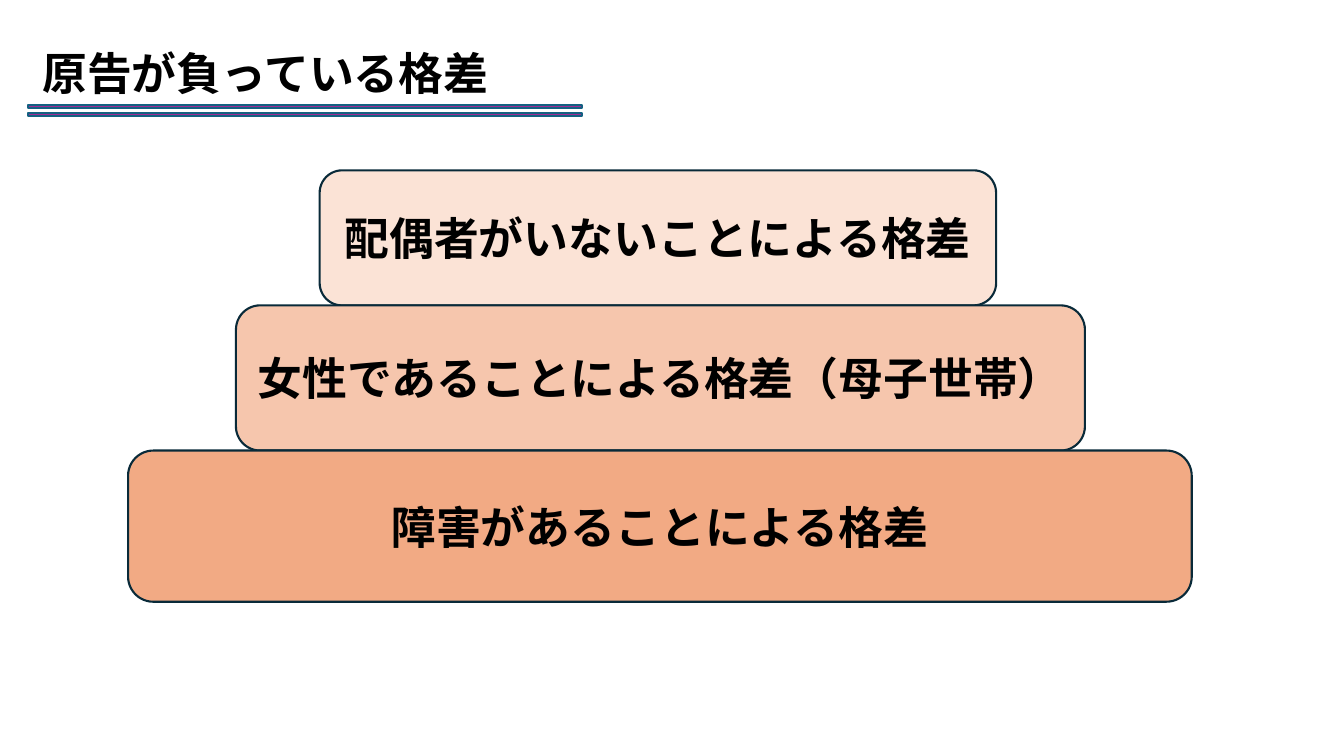
import pptx
import pptx.dml.color
import pptx.enum.shapes
import pptx.enum.text
import pptx.util

Inches = pptx.util.Inches
Shapes = pptx.enum.shapes.MSO_SHAPE
Align = pptx.enum.text.PP_ALIGN

TIERS = [
    # text, left, width, height, fill
    ("配偶者がいないことによる格差", 3.17, 6.71, 1.34, "FBE3D6"),
    ("女性であることによる格差（母子世帯）", 2.34, 8.42, 1.44, "F6C6AD"),
    ("障害があることによる格差", 1.27, 10.55, 1.5, "F2AA84"),
]


def color(value):
    return pptx.dml.color.RGBColor.from_string(value)


def write_text(shape, text, font_name, alignment):
    frame = shape.text_frame
    frame.word_wrap = True
    frame.auto_size = pptx.enum.text.MSO_AUTO_SIZE.NONE
    frame.vertical_anchor = pptx.enum.text.MSO_ANCHOR.MIDDLE
    paragraph = frame.paragraphs[0]
    paragraph.alignment = alignment
    run = paragraph.add_run()
    run.text = text
    font_format = {"name": font_name, "size": pptx.util.Pt(32), "bold": True}
    for attribute, value in font_format.items():
        setattr(run.font, attribute, value)
    run.font.color.rgb = color("000000")
    return paragraph


def add_filled_shape(slide, kind, box, fill, line):
    shape = slide.shapes.add_shape(kind, *map(Inches, box))
    shape.shadow.inherit = False
    shape.fill.solid()
    shape.fill.fore_color.rgb = color(fill)
    shape.line.color.rgb = color(line)
    shape.line.width = pptx.util.Pt(1.5)
    return shape


def add_heading(slide, left, top, width, height):
    """Place the title and the double rule beneath it."""
    title = slide.shapes.title
    box = {"left": left, "top": top, "width": width, "height": height}
    for attribute, value in box.items():
        setattr(title, attribute, Inches(value))
    paragraph = write_text(title, "原告が負っている格差", "Arial", Align.LEFT)
    paragraph.line_spacing = 0.9

    rule_box = (left - 1.03, top + 0.75, 7.47, 0.23)
    rule = add_filled_shape(slide, Shapes.MATH_EQUAL, rule_box, "A02B93", "156082")
    rule.adjustments[0] = 0.132
    rule.adjustments[1] = 0.221


def add_tiers(slide, top):
    """Stack the tiers downwards without gaps."""
    for text, left, width, height, fill in TIERS:
        box = (left, top, width, height)
        tier = add_filled_shape(slide, Shapes.ROUNDED_RECTANGLE, box, fill, "092A39")
        write_text(tier, text, "Calibri", Align.CENTER)
        top += height


def main():
    presentation = pptx.Presentation()
    presentation.slide_width = Inches(13.33)
    presentation.slide_height = Inches(7.5)
    slide = presentation.slides.add_slide(presentation.slide_layouts[5])
    add_heading(slide, 0.32, 0.23, 11.5, 1.05)
    add_tiers(slide, 1.69)
    presentation.save("out.pptx")


if __name__ == "__main__":
    main()
